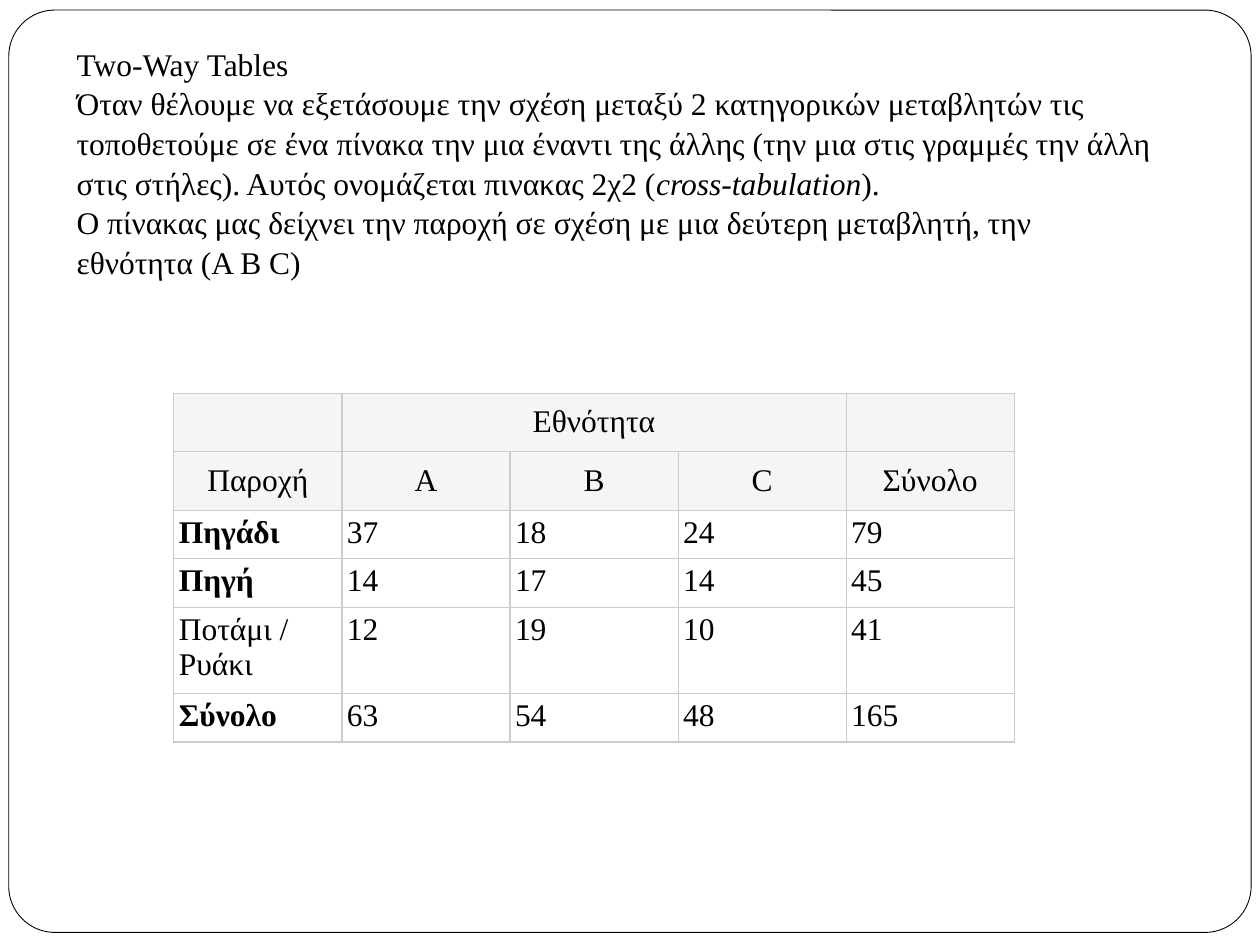
from pptx import Presentation
from pptx.dml.color import RGBColor
from pptx.enum.shapes import MSO_SHAPE
from pptx.enum.text import MSO_ANCHOR, PP_ALIGN
from pptx.oxml import parse_xml
from pptx.oxml.ns import nsdecls
from pptx.util import Inches, Pt

BLACK = RGBColor(0x00, 0x00, 0x00)
WHITE = RGBColor(0xFF, 0xFF, 0xFF)
HEADER_GRAY = RGBColor(0xF5, 0xF5, 0xF5)
BORDER_GRAY = RGBColor(0xCC, 0xCC, 0xCC)

# Content: each paragraph is a list of (text, italic) runs
INTRO = [
    [("Two-Way Tables", False)],
    [("Όταν θέλουμε να εξετάσουμε την σχέση μεταξύ 2 κατηγορικών μεταβλητών τις "
      "τοποθετούμε σε ένα πίνακα την μια έναντι της άλλης (την μια στις γραμμές "
      "την άλλη στις στήλες). Αυτός ονομάζεται πινακας 2χ2 (", False),
     ("cross-tabulation", True), (").", False)],
    [("Ο πίνακας μας δείχνει την παροχή σε σχέση με μια δεύτερη μεταβλητή, "
      "την εθνότητα (A B C)", False)],
]
CROSS_TAB = [
    ["", "Εθνότητα", "", "", ""],
    ["Παροχή", "A", "B", "C", "Σύνολο"],
    ["Πηγάδι", "37", "18", "24", "79"],
    ["Πηγή", "14", "17", "14", "45"],
    ["Ποτάμι / Ρυάκι", "12", "19", "10", "41"],
    ["Σύνολο", "63", "54", "48", "165"],
]
HEADER_ROWS = 2
BOLD_LABELS = {"Πηγάδι", "Πηγή", "Σύνολο"}
ROW_HEIGHTS = [0.46, 0.47, 0.385, 0.385, 0.685, 0.385]
TABLE_WIDTH = 6.67


def add_text(paragraph, text, bold=False, italic=False, align=PP_ALIGN.LEFT):
    paragraph.alignment = align
    run = paragraph.add_run()
    run.text = text
    font = run.font
    font.name, font.size = "Times New Roman", Pt(18)
    font.bold, font.italic = bold, italic
    font.color.rgb = BLACK


def add_borders(cell):
    properties = cell._tc.get_or_add_tcPr()
    for position, side in enumerate(("lnL", "lnR", "lnT", "lnB")):
        properties.insert(position, parse_xml(
            f'<a:{side} {nsdecls("a")} w="{Pt(0.75)}"><a:solidFill>'
            f'<a:srgbClr val="{BORDER_GRAY}"/></a:solidFill></a:{side}>'))


prs = Presentation()
prs.slide_width, prs.slide_height = Inches(10), Inches(7.5)
slide = prs.slides.add_slide(prs.slide_layouts[6])

# Rounded frame
frame = slide.shapes.add_shape(MSO_SHAPE.ROUNDED_RECTANGLE, Inches(0.07),
                               Inches(0.08), Inches(9.86), Inches(7.32))
frame.adjustments[0] = 0.05
frame.shadow.inherit = False
frame.fill.solid()
frame.fill.fore_color.rgb = WHITE
frame.line.color.rgb = BLACK
frame.line.width = Pt(0.5)

# Introduction
intro = slide.shapes.add_textbox(Inches(0.51), Inches(0.29),
                                 Inches(8.74), Inches(1.92)).text_frame
intro.word_wrap = True
for index, runs in enumerate(INTRO):
    paragraph = intro.add_paragraph() if index else intro.paragraphs[0]
    paragraph.line_spacing = 1.05
    for text, italic in runs:
        add_text(paragraph, text, italic=italic)

# Cross-tabulation
cross_tab = slide.shapes.add_table(
    len(CROSS_TAB), len(CROSS_TAB[0]), Inches(1.38), Inches(3.12),
    Inches(TABLE_WIDTH), Inches(sum(ROW_HEIGHTS))).table
for column in cross_tab.columns:
    column.width = Inches(TABLE_WIDTH / len(CROSS_TAB[0]))
for row, height in zip(cross_tab.rows, ROW_HEIGHTS):
    row.height = Inches(height)

for r, values in enumerate(CROSS_TAB):
    is_header = r < HEADER_ROWS
    margin = Inches(0.08 if is_header else 0.04)
    for c, value in enumerate(values):
        cell = cross_tab.cell(r, c)
        cell.margin_left = cell.margin_right = margin
        cell.margin_top = cell.margin_bottom = margin
        cell.vertical_anchor = MSO_ANCHOR.MIDDLE if is_header else MSO_ANCHOR.TOP
        cell.fill.solid()
        cell.fill.fore_color.rgb = HEADER_GRAY if is_header else WHITE
        add_borders(cell)
        if value:
            add_text(cell.text_frame.paragraphs[0], value,
                     bold=not is_header and value in BOLD_LABELS,
                     align=PP_ALIGN.CENTER if is_header else PP_ALIGN.LEFT)
cross_tab.cell(0, 1).merge(cross_tab.cell(0, 3))

prs.save("out.pptx")
